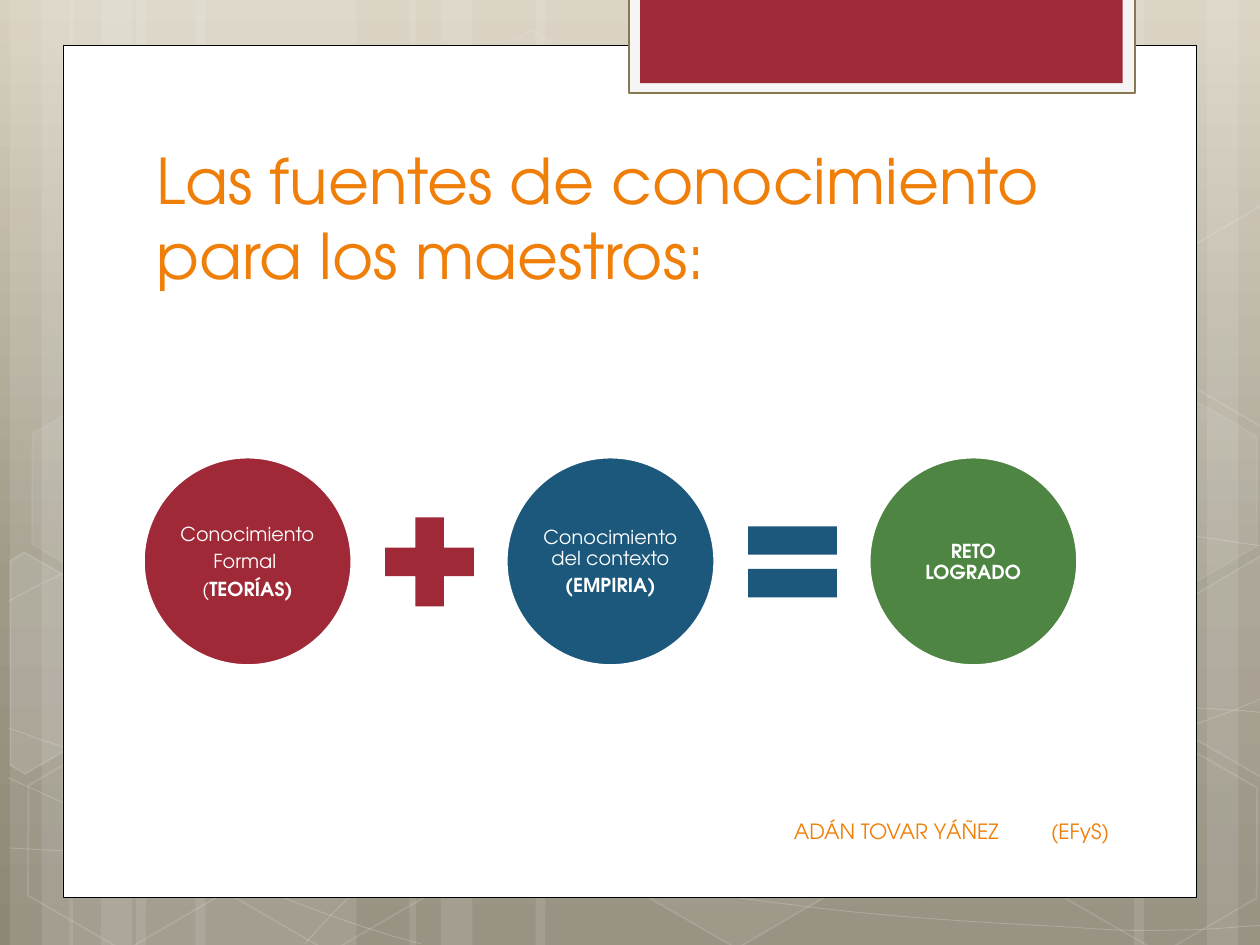
from copy import deepcopy
from math import cos, radians, sin

from lxml import etree
from pptx import Presentation
from pptx.dml.color import RGBColor
from pptx.enum.shapes import MSO_SHAPE
from pptx.enum.text import MSO_ANCHOR, PP_ALIGN
from pptx.oxml.ns import qn
from pptx.util import Inches, Pt

RECT, OVAL, HEXAGON = MSO_SHAPE.RECTANGLE, MSO_SHAPE.OVAL, MSO_SHAPE.HEXAGON
PLUS, EQUAL = MSO_SHAPE.MATH_PLUS, MSO_SHAPE.MATH_EQUAL
MIDDLE, BOTTOM = MSO_ANCHOR.MIDDLE, MSO_ANCHOR.BOTTOM
LEFT, CENTER = PP_ALIGN.LEFT, PP_ALIGN.CENTER

FONT = "TeX Gyre Adventor"
WHITE, BLACK, ORANGE = "FFFFFF", "000000", "F07F09"
RED, BLUE, GREEN = "9F2936", "1B587C", "4E8542"
BACKDROP = [(0, "D8D1C0"), (0.62, "9F9988"), (1, "8E8776")]
TILT = 30

STRIPES = [(1.08, 1.75), (0.08, 0.5), (0.33, 0.83), (1.55, 1.75), (0.55, 0.5), (0.8, 0.83),
           (7.33, 1.75), (9.58, 0.5), (9, 0.83), (4.25, 3.08), (3.25, 0.5), (3.5, 0.83)]

CURVES = [
    [(0.07, 6.73), (0.61, 6.76), (1.15, 6.79), (1.9, 6.78), (2.65, 6.77), (3.58, 6.75), (4.58, 6.65),
     (5.58, 6.55), (7, 6.36), (7.92, 6.17), (8.83, 5.98), (9.77, 5.68), (10.07, 5.51)],
    [(0.07, 4.77), (0.36, 4.61), (0.65, 4.46), (1.21, 4.31), (1.78, 4.16), (2.59, 3.94), (3.47, 3.87),
     (4.36, 3.8), (5.44, 3.79), (6.54, 3.87), (7.64, 3.95), (9.47, 4.26), (10.07, 4.34)],
    [(0.06, 6.17), (1.27, 6.72), (2.47, 7.27), (3.34, 7.49)],
    [(0.07, 5.78), (0.38, 5.89), (0.7, 6), (1.28, 6.16), (1.86, 6.31), (2.73, 6.56), (3.57, 6.73),
     (4.4, 6.9), (5.45, 7.08), (6.28, 7.18), (7.11, 7.29), (8, 7.33), (8.53, 7.36),
     (9.05, 7.4), (9.19, 7.38), (9.45, 7.38), (9.71, 7.37), (9.89, 7.35), (10.07, 7.34)],
    [(2.42, 7.49), (2.6, 7.29), (2.78, 7.09), (3.02, 6.91), (3.26, 6.73), (3.6, 6.53), (3.88, 6.39),
     (4.16, 6.25), (4.33, 6.19), (4.7, 6.09), (5.06, 5.99), (5.73, 5.85), (6.08, 5.78),
     (6.44, 5.71), (6.49, 5.71), (6.8, 5.69), (7.11, 5.66), (7.6, 5.63), (7.94, 5.62),
     (8.29, 5.61), (8.86, 5.62), (8.86, 5.62), (9.08, 5.62), (9.31, 5.62), (9.53, 5.62),
     (9.71, 5.63), (9.88, 5.64), (9.97, 5.65), (10.06, 5.66), (10.03, 5.65), (10.06, 5.66)],
]

HEXAGONS = [(3.34, 0.36, 4, 8), (4.97, 5.89, 6, 12), (0.11, 5.91, 0, 12),
            (0.14, 3.12, 7, 8), (1.74, 5.92, 0, 12), (7.53, 4.53, 10, 12),
            (8.34, 5.93, 0, 12), (8.34, 3.14, 7, 8)]

CUT_HEXAGONS = [
    ((0.36, 5.35), 10,
     [(0.08, 4.45), (0.19, 4.38), (0.96, 4.82), (0.95, 5.7), (0.2, 6.14), (0.08, 6.07)]),
    ((9.85, 5.2), 4,
     [(9.26, 4.85), (10.01, 4.41), (10.09, 4.46), (10.09, 6.13), (10.02, 6.17), (9.26, 5.73)]),
    ((9.85, 2.41), 0,
     [(9.26, 2.07), (10.01, 1.63), (10.1, 1.68), (10.09, 3.35), (10.02, 3.39), (9.26, 2.95)]),
]

TERMS = [
    (RED, PLUS, [[("Conocimiento", False)], [("Formal ", False)], [("(", False), ("TEORÍAS)", True)]]),
    (BLUE, EQUAL, [[("Conocimiento del contexto", False)], [("(EMPIRIA)", True)]]),
    (GREEN, None, [[("RETO LOGRADO", True)]]),
]


def rgb(color):
    return RGBColor.from_string(color)


def set_alpha(clr, percent):
    etree.SubElement(clr, qn("a:alpha")).set("val", str(percent * 1000))


def turn(points, center, degrees):
    c, d = cos(radians(degrees)), sin(radians(degrees))
    cx, cy = center
    return [(cx + (x - cx) * c - (y - cy) * d, cy + (x - cx) * d + (y - cy) * c) for x, y in points]


class SlideBuilder:
    def __init__(self, slide, font):
        self.slide = slide
        self.font = font

    def background(self, stops):
        fill = self.slide.background.fill
        fill.gradient()
        fill.gradient_angle = 270
        gs_list = self.slide.element.find(".//" + qn("a:gsLst"))
        gs_list.append(deepcopy(gs_list[0]))
        for stop, (position, color) in zip(fill.gradient_stops, stops):
            stop.position = position
            stop.color.rgb = rgb(color)

    def paint(self, s, fill=None, alpha=100, line=None, width=1, line_alpha=100):
        s.shadow.inherit = False
        spPr = s.element.spPr
        if fill and alpha:
            s.fill.solid()
            s.fill.fore_color.rgb = rgb(fill)
            if alpha < 100:
                set_alpha(spPr.find(qn("a:solidFill"))[0], alpha)
        else:
            s.fill.background()
        if line:
            s.line.color.rgb = rgb(line)
            s.line.width = Pt(width)
            if line_alpha < 100:
                set_alpha(spPr.find(qn("a:ln")).find(qn("a:solidFill"))[0], line_alpha)
        else:
            s.line.fill.background()

    def shape(self, kind, x, y, w, h, **style):
        s = self.slide.shapes.add_shape(kind, Inches(x), Inches(y), Inches(w), Inches(h))
        self.paint(s, **style)
        return s

    def outline(self, points, close=False, **style):
        points = [(Inches(x), Inches(y)) for x, y in points]
        builder = self.slide.shapes.build_freeform(*points[0])
        builder.add_line_segments(points[1:], close=close)
        s = builder.convert_to_shape()
        self.paint(s, **style)
        return s

    def curve(self, points, **style):
        s = self.outline(points, **style)
        path = s.element.spPr.find(".//" + qn("a:path"))
        segments = path.findall(qn("a:lnTo"))
        for i in range(0, len(segments), 3):
            bezier = etree.SubElement(path, qn("a:cubicBezTo"))
            for segment in segments[i:i + 3]:
                bezier.append(segment[0])
                path.remove(segment)

    def text(self, x, y, w, h, paragraphs, size, color, anchor=MIDDLE, align=LEFT,
             inset=None, spacing=None, after=None):
        box = self.slide.shapes.add_textbox(Inches(x), Inches(y), Inches(w), Inches(h))
        tf = box.text_frame
        tf.word_wrap = True
        tf.vertical_anchor = anchor
        if inset is not None:
            tf.margin_left = tf.margin_right = tf.margin_top = tf.margin_bottom = Inches(inset)
        for i, runs in enumerate(paragraphs):
            p = tf.add_paragraph() if i else tf.paragraphs[0]
            p.alignment = align
            p.line_spacing = spacing
            p.space_after = after
            p.font.name = self.font
            p.font.size = Pt(size)
            p.font.color.rgb = rgb(color)
            for text, bold in runs:
                r = p.add_run()
                r.text = text
                r.font.bold = bold
        return tf


def main():
    prs = Presentation()
    prs.slide_width, prs.slide_height = Inches(10), Inches(7.5)
    b = SlideBuilder(prs.slides.add_slide(prs.slide_layouts[6]), FONT)

    b.background(BACKDROP)
    for x, w in STRIPES:
        b.shape(RECT, x, 0, w, 7.5, fill=WHITE, alpha=10)
    for points in CURVES:
        b.curve(points, line=WHITE, width=0.5, line_alpha=20)
    for x, y, alpha, line_alpha in HEXAGONS:
        s = b.shape(HEXAGON, x, y, 1.75, 1.52, fill=WHITE, alpha=alpha,
                    line=WHITE, line_alpha=line_alpha)
        s.adjustments[0] = 0.285
        s.rotation = TILT
    for center, alpha, points in CUT_HEXAGONS:
        s = b.outline(turn(points, center, -TILT), close=True, fill=WHITE, alpha=alpha,
                      line=WHITE, line_alpha=12)
        s.rotation = TILT

    b.shape(RECT, 0.5, 0.36, 9, 6.76, fill=WHITE, line=BLACK, width=0.5)
    b.shape(RECT, 4.99, -0.02, 4.02, 0.76, fill="F5F5F5", line="887952", width=1.25)
    b.shape(RECT, 5.08, -0.02, 3.83, 0.68, fill=RED)
    b.text(1.14, 1.12, 7.68, 1.25, [[("Las fuentes de conocimiento para los maestros:", False)]],
           36, ORANGE, anchor=BOTTOM)

    for i, (color, operator, paragraphs) in enumerate(TERMS):
        x = 1.14 + 2.88 * i
        b.shape(OVAL, x, 3.63, 1.65, 1.65, fill=color, line=WHITE, width=1.25)
        b.text(x + 0.24, 3.88, 1.17, 1.17, paragraphs, 11, WHITE, align=CENTER,
               inset=0.02, spacing=0.9, after=Pt(3.85))
        if operator is not None:
            b.shape(operator, x + 1.79, 3.98, 0.96, 0.96, fill=color)

    tf = b.text(5.08, 6.4, 3.83, 0.4, [[("ADÁN TOVAR YÁÑEZ\t(EFyS)", False)]], 12, ORANGE)
    tf.margin_left = Inches(1.22)
    tabs = etree.Element(qn("a:tabLst"))
    etree.SubElement(tabs, qn("a:tab"), pos=str(Inches(2.04)), algn="l")
    tf.paragraphs[0]._p.pPr.find(qn("a:defRPr")).addprevious(tabs)

    prs.save("out.pptx")


if __name__ == "__main__":
    main()
